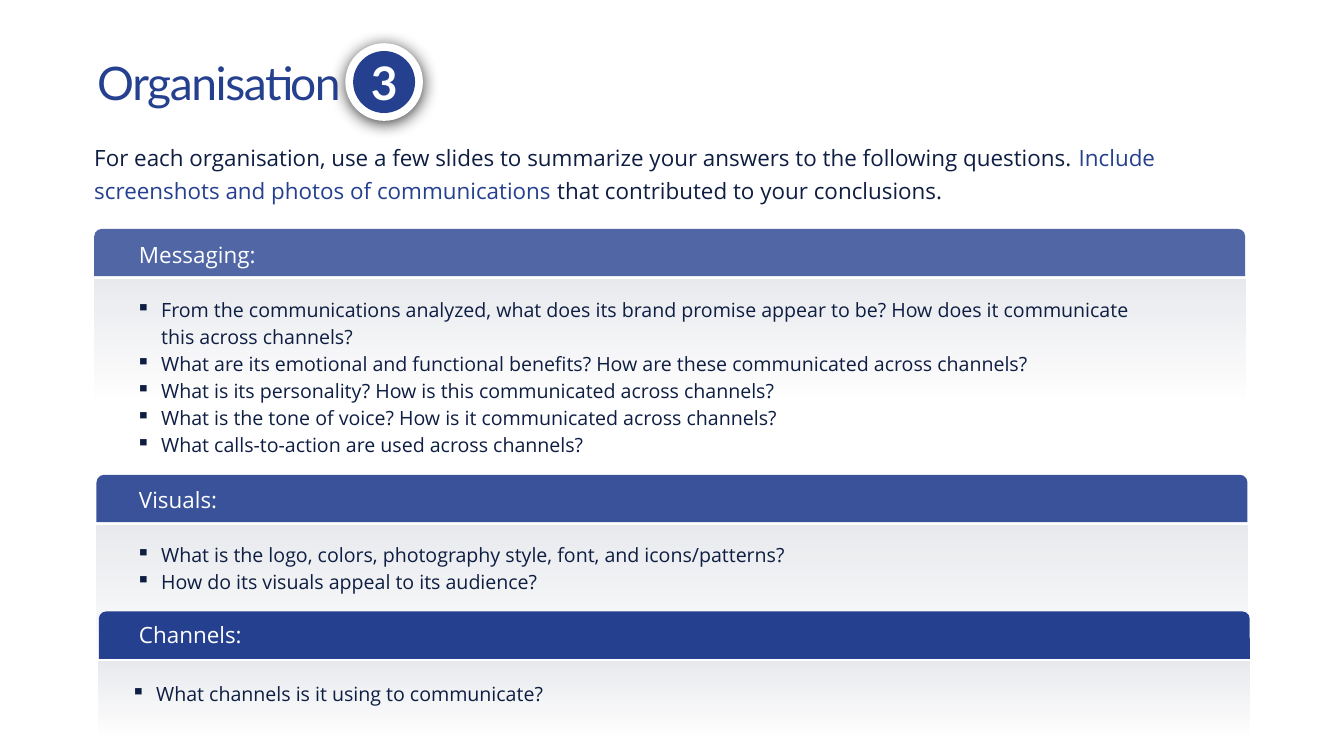
"""Build the "Organisation 3" slide with its three question sections."""
from dataclasses import dataclass
from typing import Any

import pptx
import pptx.dml.color
import pptx.enum.shapes
import pptx.enum.text
import pptx.oxml
import pptx.oxml.ns
import pptx.util

SLIDE_WIDTH = pptx.util.Inches(26.67)
SLIDE_HEIGHT = pptx.util.Inches(15)
COLUMN = SLIDE_WIDTH / 100
ROW = SLIDE_HEIGHT / 100
NAVY, BLUE, WHITE = "0E1D42", "25408F", "FFFFFF"
BODY_FONT, DISPLAY_FONT = "Open Sans", "Lato"
SHAPES = pptx.enum.shapes.MSO_SHAPE
MIDDLE = pptx.enum.text.MSO_ANCHOR.MIDDLE
INSET = pptx.util.Inches(0.06)
SECTION_LEFT, SECTION_STEP, SECTION_WIDTH = 7.01, 0.17, 85.64
HEADER_HEIGHT, PANEL_OFFSET = 6.27, 6.67
LABEL_LEFT, LABEL_WIDTH, LABEL_HEIGHT = 10.12, 22.12, 4.27
BADGE_COLUMN, BADGE_ROW = 28.58, 10.85


@dataclass(frozen=True)
class Box:
    left: float
    top: float
    width: float
    height: float

    def emu(self) -> tuple[int, int, int, int]:
        """Return the box in slide units."""
        return (round(self.left * COLUMN), round(self.top * ROW),
                round(self.width * COLUMN), round(self.height * ROW))


@dataclass(frozen=True)
class Section:
    label: str
    top: float
    opacity: int
    panel_height: float
    label_offset: float
    question_box: Box
    questions: tuple[str, ...]


SECTIONS = (
    Section("Messaging:", 30.27, 80, 16.73, 1.2, Box(10.12, 38.93, 76.3, 21.27), (
        "From the communications analyzed, what does its brand promise appear to be? "
        "How does it communicate this across channels?",
        "What are its emotional and functional benefits? How are these communicated across channels?",
        "What is its personality? How is this communicated across channels?",
        "What is the tone of voice? How is it communicated across channels?",
        "What calls-to-action are used across channels?",
    )),
    Section("Visuals:", 62.8, 90, 19.6, 1.13, Box(10.12, 71.4, 79.68, 6.8), (
        "What is the logo, colors, photography style, font, and icons/patterns?",
        "How do its visuals appeal to its audience?",
    )),
    Section("Channels:", 80.87, 100, 10.27, 0.87, Box(9.75, 89.73, 79.3, 3.13), (
        "What channels is it using to communicate?",
    )),
)


def rgb(value: str) -> pptx.dml.color.RGBColor:
    """Turn a hex string into a colour."""
    return pptx.dml.color.RGBColor.from_string(value)


def add_xml(parent: Any, body: str) -> None:
    """Append a drawing element written as XML."""
    tag, rest = body.split(" ", 1)
    namespace = pptx.oxml.ns.nsdecls("a")
    parent.append(pptx.oxml.parse_xml(f"<a:{tag} {namespace} {rest}"))


def set_opacity(shape: Any, *percents: int) -> None:
    """Give each fill colour of a shape its opacity."""
    colours = shape._element.spPr.iter(pptx.oxml.ns.qn("a:srgbClr"))
    for colour, percent in zip(colours, percents):
        add_xml(colour, f'alpha val="{percent * 1000}"/>')


def add_solid(shapes: Any, preset: Any, box: Box, colour: str) -> Any:
    """Draw an unlined, flat shape."""
    shape = shapes.add_shape(preset, *box.emu())
    shape.shadow.inherit = False
    shape.line.fill.background()
    shape.fill.solid()
    shape.fill.fore_color.rgb = rgb(colour)
    return shape


def add_text(shapes: Any, box: Box, texts: tuple[str, ...], size: int, colour: str,
             font: str = BODY_FONT, inset: int = INSET, grow: bool = True,
             middle: bool = False) -> list[Any]:
    """Write paragraphs in a wrapping text box and return them."""
    frame = shapes.add_textbox(*box.emu()).text_frame
    frame.word_wrap = True
    frame.margin_left = frame.margin_right = inset
    frame.margin_top = frame.margin_bottom = inset
    if grow:
        frame.auto_size = pptx.enum.text.MSO_AUTO_SIZE.SHAPE_TO_FIT_TEXT
    if middle:
        frame.vertical_anchor = MIDDLE
    frame.text = "\n".join(texts)
    for paragraph in frame.paragraphs:
        paragraph.font.size = pptx.util.Pt(size)
        paragraph.font.name = font
        paragraph.font.color.rgb = rgb(colour)
    return list(frame.paragraphs)


def add_section(shapes: Any, section: Section, index: int) -> None:
    """Draw a section's fading panel, header and bulleted questions."""
    left = SECTION_LEFT + index * SECTION_STEP
    panel = add_solid(shapes, SHAPES.RECTANGLE, Box(
        left, section.top + PANEL_OFFSET, SECTION_WIDTH, section.panel_height), NAVY)
    panel.fill.gradient()
    panel.fill.gradient_angle = 270
    for stop in panel.fill.gradient_stops:
        stop.color.rgb = rgb(NAVY)
    set_opacity(panel, 10, 0)

    header = add_solid(shapes, SHAPES.ROUND_2_SAME_RECTANGLE, Box(
        left, section.top, SECTION_WIDTH, HEADER_HEIGHT), BLUE)
    header.adjustments[0] = 0.16
    if section.opacity < 100:
        set_opacity(header, section.opacity)
    add_text(shapes, Box(LABEL_LEFT, section.top + section.label_offset,
                         LABEL_WIDTH, LABEL_HEIGHT),
             (section.label,), 32, WHITE, middle=True)

    indent = pptx.util.Inches(0.5)
    for question in add_text(shapes, section.question_box, section.questions, 28, NAVY, inset=0):
        question.line_spacing = 1.15
        properties = question._p.get_or_add_pPr()
        properties.set("marL", str(indent))
        properties.set("indent", str(-indent))
        bullet = pptx.oxml.parse_xml(f'<a:buChar {pptx.oxml.ns.nsdecls("a")} char="▪"/>')
        properties.find(pptx.oxml.ns.qn("a:defRPr")).addprevious(bullet)


def add_disc(shapes: Any, diameter: float, colour: str) -> Any:
    """Draw a circle around the badge centre, its diameter given in rows."""
    width = diameter * ROW / COLUMN
    return add_solid(shapes, SHAPES.OVAL, Box(
        BADGE_COLUMN - width / 2, BADGE_ROW - diameter / 2, width, diameter), colour)


def add_badge(shapes: Any) -> None:
    """Draw the numbered badge beside the title."""
    badge = shapes.add_group_shape().shapes
    rim = add_disc(badge, 10.27, WHITE)
    effects = rim._element.spPr.find(pptx.oxml.ns.qn("a:effectLst"))
    blur, distance = pptx.util.Pt(23), pptx.util.Pt(4)
    add_xml(effects, f'outerShdw blurRad="{blur}" dist="{distance}" dir="5400000" '
                     'rotWithShape="0"><a:srgbClr val="2F2F2F"><a:alpha val="92000"/>'
                     '</a:srgbClr></a:outerShdw>')
    add_disc(badge, 8.2, BLUE)
    number, = add_text(badge, Box(26.96, 6.8, 3.26, 8.07), ("3",), 66, WHITE,
                       DISPLAY_FONT, middle=True)
    number.font.bold = True
    number.alignment = pptx.enum.text.PP_ALIGN.CENTER


def main() -> None:
    """Build and save the slide."""
    deck = pptx.Presentation()
    deck.slide_width, deck.slide_height = SLIDE_WIDTH, SLIDE_HEIGHT
    shapes = deck.slides.add_slide(deck.slide_layouts[6]).shapes

    title, = add_text(shapes, Box(7.01, 8.27, 56.62, 8.4), ("Organisation",), 66, BLUE,
                      DISPLAY_FONT, grow=False)
    title.line_spacing = 0.8
    title.runs[0]._r.get_or_add_rPr().set("spc", "-200")

    intro, = add_text(shapes, Box(7.01, 18.33, 85.98, 8.53), (
        "For each organisation, use a few slides to summarize your answers "
        "to the following questions. ",), 32, NAVY, inset=0, middle=True)
    intro.line_spacing = pptx.util.Pt(47)
    for words, colour in (("Include screenshots and photos of communications ", BLUE),
                          ("that contributed to your conclusions.", NAVY)):
        run = intro.add_run()
        run.text = words
        run.font.color.rgb = rgb(colour)

    for index, section in enumerate(SECTIONS):
        add_section(shapes, section, index)
    add_badge(shapes)
    deck.save("out.pptx")


if __name__ == "__main__":
    main()
